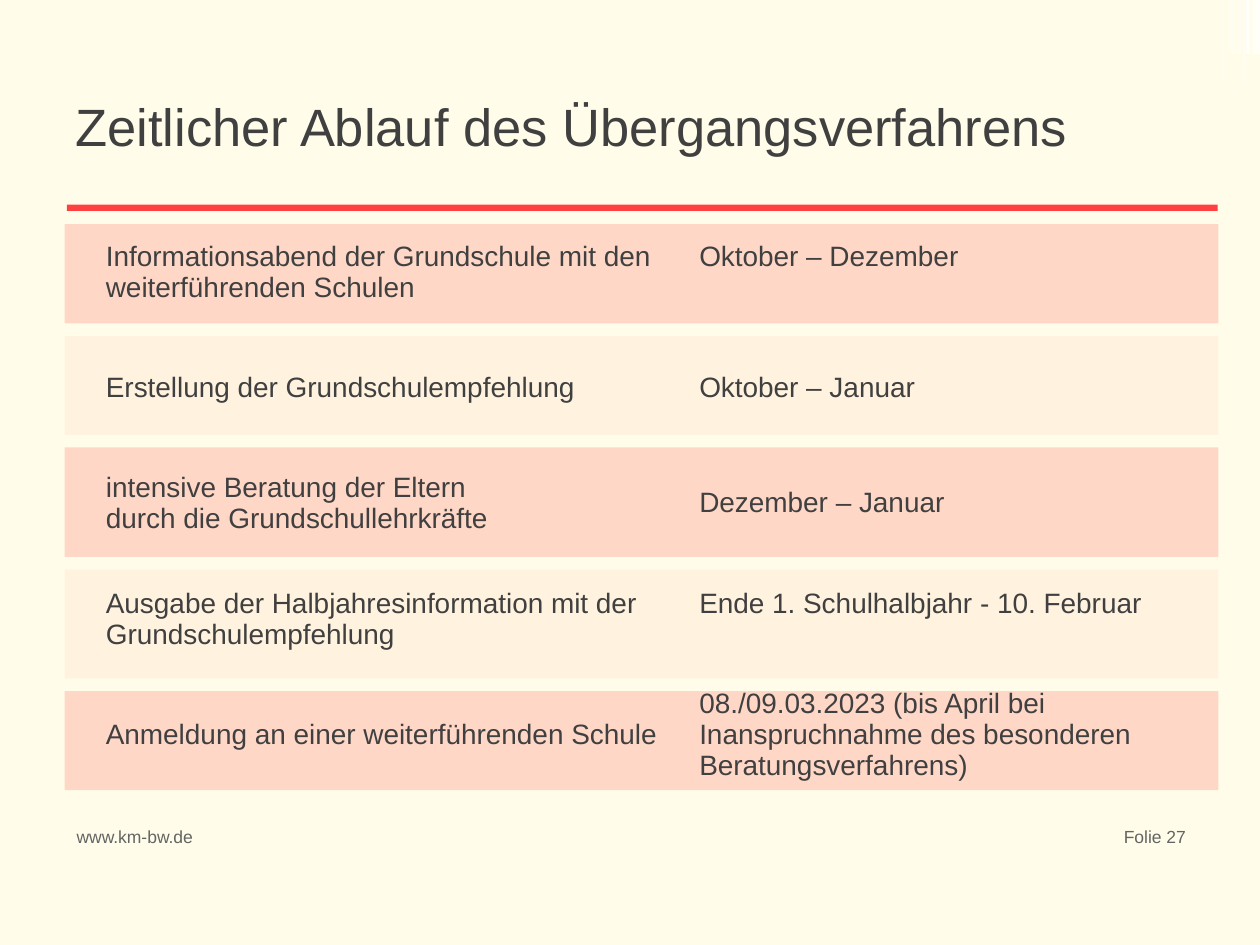
from pptx import Presentation
from pptx.dml.color import RGBColor
from pptx.enum.shapes import MSO_SHAPE
from pptx.enum.text import MSO_ANCHOR, MSO_AUTO_SIZE, PP_ALIGN
from pptx.oxml.ns import qn
from pptx.util import Pt
from lxml import etree

RECT = MSO_SHAPE.RECTANGLE
TOP, MIDDLE = MSO_ANCHOR.TOP, MSO_ANCHOR.MIDDLE
LEFT, RIGHT = PP_ALIGN.LEFT, PP_ALIGN.RIGHT
FIXED = MSO_AUTO_SIZE.NONE
PLAIN = "{2D5ABB26-0587-4C30-8999-92F81FD0307C}"
FONT, DARK, GREY, RED, PINK, WHITE = "Arial", "404040", "646464", "FF4040", "FF7F7F", "FFFFFF"

STEPS = [
    ("Informationsabend der Grundschule mit den weiterführenden Schulen", "Oktober – Dezember"),
    ("Erstellung der Grundschulempfehlung", "Oktober – Januar"),
    ("intensive Beratung der Eltern\ndurch die Grundschullehrkräfte", "Dezember – Januar"),
    ("Ausgabe der Halbjahresinformation mit der Grundschulempfehlung",
     "Ende 1. Schulhalbjahr - 10. Februar"),
    ("Anmeldung an einer weiterführenden Schule",
     "08./09.03.2023 (bis April bei Inanspruchnahme des besonderen Beratungsverfahrens)"),
]
RAISED = (0, 3)
BANDS = [56.7, 56.7, 62.5, 62.5, 56.7]
GAP = 7.1
STRIPES = [(712.1, 2.2, 31, 65), (715.7, 4.3, 31, 65), (698.4, 0.7, 46, 30),
           (710.6, 0.7, 49, 60), (702, 4.3, 31, 20), (707, 2.2, 31, 40)]


def paint(fill, color, alpha=100):
    """Fill with a hex colour at an opacity in percent."""
    fill.solid()
    fill.fore_color.rgb = RGBColor.from_string(color)
    if alpha < 100:
        tone = fill._xPr.find(".//" + qn("a:srgbClr"))
        etree.SubElement(tone, qn("a:alpha"), val=str(alpha * 1000))


def write(frame, text, size=16, color=DARK, align=LEFT):
    """Write each line of text as a formatted paragraph."""
    frame.word_wrap = True
    frame.text = text
    for para in frame.paragraphs:
        para.alignment = align
        for run in para.runs:
            run.font.name = FONT
            run.font.size = Pt(size)
            run.font.color.rgb = RGBColor.from_string(color)


def bar(slide, x, y, w, h, color, alpha=100):
    """Draw a rectangle without outline."""
    shape = slide.shapes.add_shape(RECT, Pt(x), Pt(y), Pt(w), Pt(h))
    shape.shadow.inherit = False
    shape.line.fill.background()
    paint(shape.fill, color, alpha)


def label(slide, x, y, w, h, text, **style):
    """Add a text box for the footer."""
    frame = slide.shapes.add_textbox(Pt(x), Pt(y), Pt(w), Pt(h)).text_frame
    frame.vertical_anchor = TOP
    write(frame, text, **style)


def head(slide, text):
    """Place and format the title."""
    title = slide.shapes.title
    title.left, title.top, title.width, title.height = Pt(36), Pt(44), Pt(648), Pt(55.4)
    frame = title.text_frame
    frame.auto_size = FIXED
    frame.vertical_anchor = MIDDLE
    write(frame, text, size=30)


def bands(slide):
    """Stack the alternating bands behind the table."""
    y = 128.1
    for i, h in enumerate(BANDS):
        color, alpha = (PINK, 8) if i % 2 else (RED, 20)
        bar(slide, 36.9, y, 659.4, h, color, alpha)
        y += h + GAP


def grid(slide):
    """Add the table of steps and dates."""
    frame = slide.shapes.add_table(len(STEPS), 2, Pt(53.3), Pt(122.4), Pt(629.3), Pt(330.5))
    table = frame.table
    table.first_row = table.horz_banding = False
    table._tbl.tblPr.find(qn("a:tableStyleId")).text = PLAIN
    for col, width in zip(table.columns, (339.1, 290.2)):
        col.width = Pt(width)
    for r, step in enumerate(STEPS):
        table.rows[r].height = Pt(66.1)
        for c, text in enumerate(step):
            cell = table.cell(r, c)
            cell.fill.background()
            cell.vertical_anchor = MIDDLE
            write(cell.text_frame, text)
    for r in RAISED:
        table.cell(r, 1).margin_bottom = Pt(21.3)


def main():
    """Build and save the slide."""
    deck = Presentation()
    deck.slide_width, deck.slide_height = Pt(720), Pt(540)
    slide = deck.slides.add_slide(deck.slide_layouts[5])
    paint(slide.background.fill, "FFFDE9")
    for x, w, h, alpha in STRIPES:
        bar(slide, x, 0, w, h, WHITE, alpha)
    bands(slide)
    grid(slide)
    label(slide, 36.7, 468.7, 95.8, 28, "www.km-bw.de", size=10, color=GREY)
    label(slide, 614.9, 468.7, 69.8, 28, "Folie 27", size=10, color=GREY, align=RIGHT)
    head(slide, "Zeitlicher Ablauf des Übergangsverfahrens")
    bar(slide, 38.2, 116.9, 657.7, 3.6, RED)
    deck.save("out.pptx")


if __name__ == "__main__":
    main()
